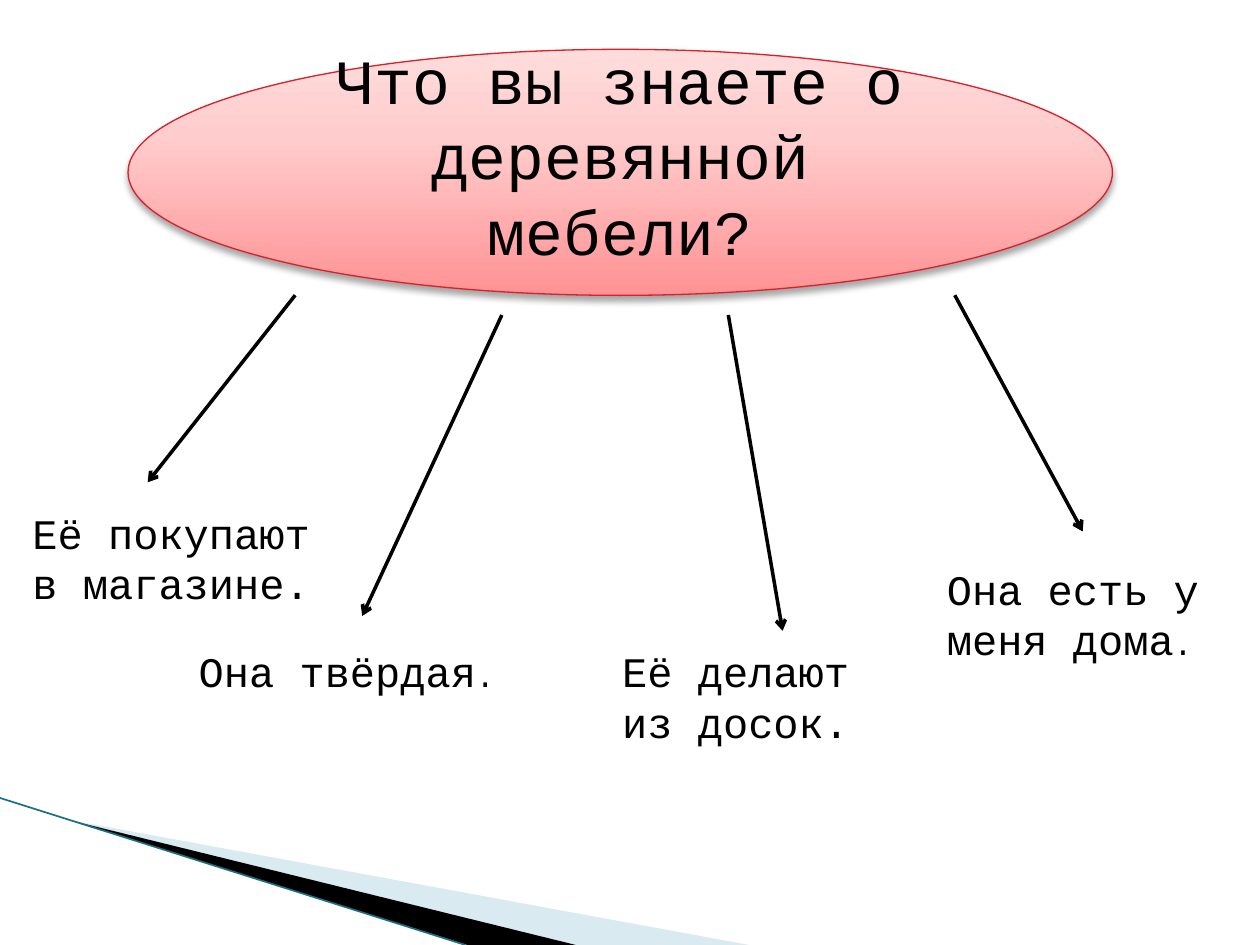
import copy
from dataclasses import dataclass

import pptx
import pptx.dml.color
import pptx.enum.shapes
import pptx.enum.text
import pptx.oxml
import pptx.oxml.ns
import pptx.util

Pt = pptx.util.Pt
qn = pptx.oxml.ns.qn
Kind = pptx.enum.shapes.MSO_SHAPE
Align = pptx.enum.text.PP_ALIGN
Anchor = pptx.enum.text.MSO_ANCHOR


@dataclass(frozen=True)
class Theme:
    font: str = "Courier New"
    ink: str = "000000"
    pale: str = "A0CBDC"
    teal: str = "1B6F82"
    red: str = "DA1F28"
    glow: tuple = ((0, "FF9294"), (0.65, "FFCDCD"), (1, "FFDCDC"))
    title: int = 36
    body: int = 24
    small: int = 18


THEME = Theme()


def color(code):
    return pptx.dml.color.RGBColor.from_string(code)


def node(tag, body="", **attrs):
    pairs = "".join(f' {key}="{value}"' for key, value in attrs.items())
    space = pptx.oxml.ns.nsdecls("a")
    return pptx.oxml.parse_xml(f"<a:{tag} {space}{pairs}>{body}</a:{tag}>")


def write(frame, *runs, align=Align.LEFT, anchor=Anchor.TOP):
    frame.word_wrap = True
    frame.vertical_anchor = anchor
    para = frame.paragraphs[0]
    para.alignment = align
    for text, size in runs:
        run = para.add_run()
        run.text = text
        run.font.name = THEME.font
        run.font.size = Pt(size)
        run.font.color.rgb = color(THEME.ink)


def line(slide, start, end, code, width, arrow=False):
    link = slide.shapes.add_connector(
        pptx.enum.shapes.MSO_CONNECTOR.STRAIGHT, *map(Pt, start + end))
    link.line.color.rgb = color(code)
    link.line.width = Pt(width)
    if arrow:
        link.line._get_or_add_ln().append(node("tailEnd", type="arrow"))
    link._element.spPr.append(node("effectLst"))


def wedge(slide, points, code, alpha=None):
    first, *rest = [(Pt(x), Pt(y)) for x, y in points]
    path = slide.shapes.build_freeform(*first)
    path.add_line_segments(rest, close=True)
    shape = path.convert_to_shape()
    shape.shadow.inherit = False
    shape.fill.solid()
    shape.fill.fore_color.rgb = color(code)
    shape.line.fill.background()
    if alpha:
        tint = shape._element.spPr.find(qn("a:solidFill"))[0]
        tint.append(node("alpha", val=alpha * 1000))


def corner(slide, left, top, width, height):
    base = top + height
    tip = (left + 39, top + 12.5)
    wedge(slide, [tip, (left + 428, base), (left + 328, base)], THEME.pale, 40)
    wedge(slide, [tip, (left + 329, base), (left + 267, base)], THEME.ink)
    line(slide, (left, top), (left + width, base), THEME.teal, 0.95)


def topic(slide, left, top, width, height):
    shape = slide.shapes.add_shape(
        Kind.OVAL, *map(Pt, (left, top, width, height)))
    shape.line.color.rgb = color(THEME.red)
    shape.line.width = Pt(0.75)
    shape.fill.gradient()
    shape.fill.gradient_angle = 90
    stops = shape._element.spPr.find(qn("a:gradFill")).find(qn("a:gsLst"))
    stops.insert(1, copy.deepcopy(stops[0]))
    for stop, (place, code) in zip(shape.fill.gradient_stops, THEME.glow):
        stop.position = place
        stop.color.rgb = color(code)
    shape.shadow.inherit = False
    shade = node("outerShdw", '<a:srgbClr val="000000"><a:alpha val="35000"/></a:srgbClr>',
                 blurRad=Pt(4), dist=Pt(3), dir=5400000, rotWithShape=0)
    shape._element.spPr.find(qn("a:effectLst")).append(shade)
    shape.text_frame.margin_bottom = Pt(24)
    write(shape.text_frame, ("Что вы знаете о деревянной мебели?", THEME.title),
          align=Align.CENTER, anchor=Anchor.MIDDLE)


def answer(slide, left, top, width, height, runs, start, end):
    line(slide, start, end, THEME.ink, 2, arrow=True)
    box = slide.shapes.add_textbox(*map(Pt, (left, top, width, height)))
    write(box.text_frame, *runs)


def main():
    deck = pptx.Presentation()
    deck.slide_width, deck.slide_height = Pt(720), Pt(540)
    slide = deck.slides.add_slide(deck.slide_layouts[6])
    corner(slide, 0, 456, 266, 84)
    topic(slide, 73.2, 28.2, 562.5, 140.6)
    big, dot = THEME.body, (".", THEME.small)
    answers = [
        (11.5, 286.5, 180, 65.5, [("Её покупают в магазине.", big)],
         (168.7, 168.7), (84.4, 275.6)),
        (106.5, 365.5, 191.5, 36, [("Она твёрдая", big), dot],
         (286.8, 180), (207, 352)),
        (348.5, 365.5, 157.5, 65.5, [("Её делают из досок.", big)],
         (416.2, 180), (447.2, 360.5)),
        (534, 318.5, 168.5, 65.5, [("Она есть у меня дома", big), dot],
         (545.6, 168.7), (618.7, 303.7)),
    ]
    for item in answers:
        answer(slide, *item)
    deck.save("out.pptx")


if __name__ == "__main__":
    main()
